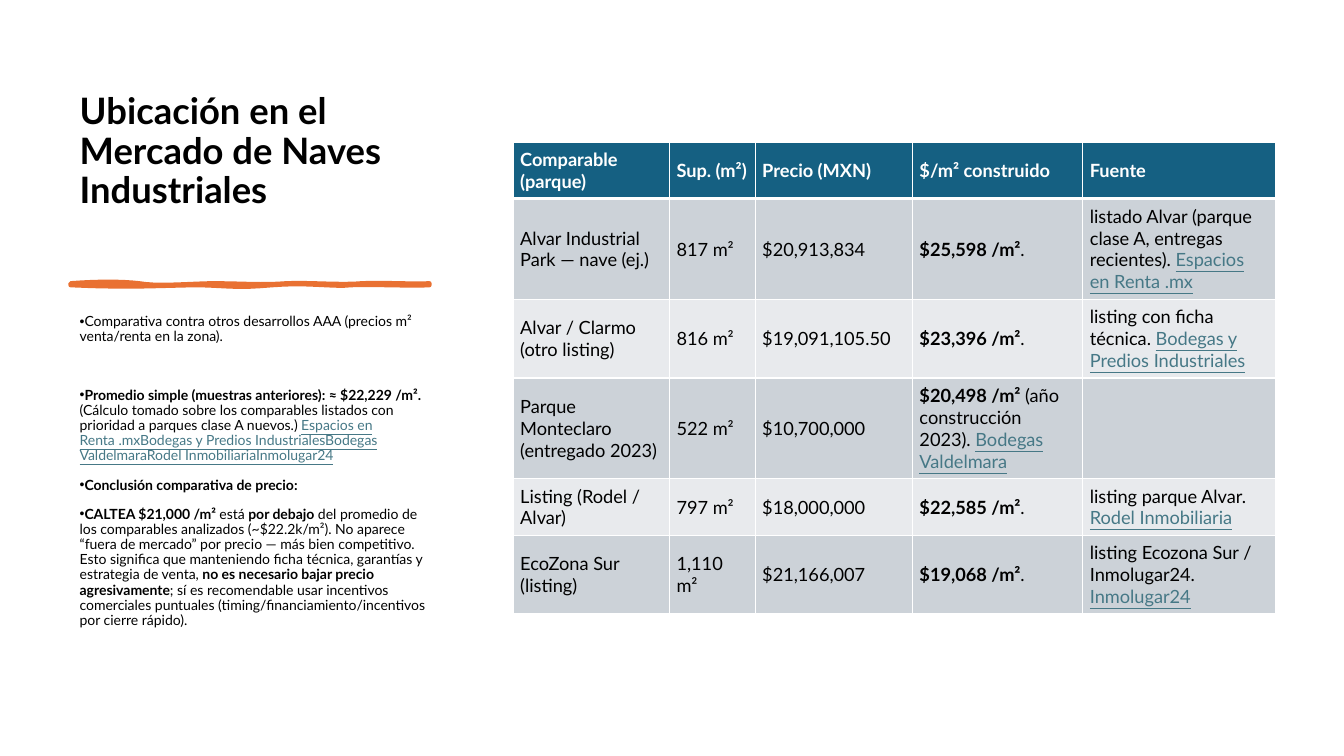
"""Build the slide that compares industrial building prices."""
from copy import deepcopy

from lxml.etree import SubElement
from pptx import Presentation
from pptx.dml.color import RGBColor
from pptx.enum.text import MSO_ANCHOR as Anchor, MSO_AUTO_SIZE as Fit, PP_ALIGN as Align
from pptx.oxml.ns import qn
from pptx.util import Inches, Pt

BLACK = RGBColor(0x00, 0x00, 0x00)
WHITE = RGBColor(0xFF, 0xFF, 0xFF)
TEAL = RGBColor(0x46, 0x78, 0x86)
BLUE = RGBColor(0x15, 0x60, 0x82)
GREY = RGBColor(0xCC, 0xD2, 0xD8)
PALE = RGBColor(0xE8, 0xEA, 0xED)
ORANGE = RGBColor(0xE9, 0x71, 0x32)


def write(par, runs, size, ink=BLACK):
    for text, mark in runs:
        run = par.add_run()
        run.text = text
        font = run.font
        font.name = "Lato"
        font.size = Pt(size)
        font.bold = mark == "bold"
        font.underline = mark == "link"
        font.color.rgb = TEAL if mark == "link" else ink
    return run


def edge(cell, side, width):
    line = SubElement(cell._tc.get_or_add_tcPr(), qn(f"a:ln{side}"), w=str(Pt(width)))
    fill = SubElement(line, qn("a:solidFill"))
    SubElement(fill, qn("a:srgbClr"), val=str(WHITE))


deck = Presentation()
deck.slide_width = Inches(13.33)
deck.slide_height = Inches(7.5)
slide = deck.slides.add_slide(deck.slide_layouts[1])

title = slide.shapes.title
title.left, title.top = Inches(0.69), Inches(0.7)
title.width, title.height = Inches(3.75), Inches(1.88)
frame = title.text_frame
frame.auto_size = Fit.NONE
frame.vertical_anchor = Anchor.BOTTOM
par = frame.paragraphs[0]
par.alignment = Align.LEFT
par.line_spacing = 0.9
run = write(par, [("Ubicación en el Mercado de Naves Industriales", "bold")], 26)
par.add_line_break()
par._p[-1].append(deepcopy(run._r.rPr))
tail = SubElement(par._p, qn("a:endParaRPr"), sz="2600", b="1")
SubElement(tail, qn("a:latin"), typeface="Lato")

curves = [
    [(0.97, 2.79), (1.21, 2.79), (1.38, 2.81)],
    [(1.55, 2.84), (1.77, 2.82), (2.09, 2.81)],
    [(2.41, 2.81), (2.6, 2.83), (2.84, 2.81)],
    [(3.08, 2.8), (3.39, 2.83), (3.59, 2.81)],
    [(3.79, 2.8), (4.12, 2.82), (4.26, 2.81)],
    [(4.26, 2.82), (4.26, 2.83), (4.26, 2.83)],
    [(4.08, 2.84), (3.64, 2.82), (3.48, 2.83)],
    [(3.32, 2.85), (3.04, 2.8), (2.7, 2.83)],
    [(2.35, 2.86), (2.31, 2.84), (1.99, 2.83)],
    [(1.66, 2.83), (1.32, 2.86), (0.7, 2.83)],
]
steps = 8
start = (0.7, 2.81)
dots = []
for one, two, end in curves:
    for t in (i / steps for i in range(1, steps + 1)):
        u = 1 - t
        dots.append(tuple(
            Inches(u**3 * a + 3 * u * u * t * b + 3 * u * t * t * c + t**3 * d)
            for a, b, c, d in zip(start, one, two, end)))
    start = end
pen = slide.shapes.build_freeform(Inches(0.7), Inches(2.81))
pen.add_line_segments(dots, close=True)
stroke = pen.convert_to_shape()
stroke.shadow.inherit = False
stroke.fill.solid()
stroke.fill.fore_color.rgb = ORANGE
stroke.line.color.rgb = ORANGE
stroke.line.width = Pt(3)
SubElement(stroke.line._get_or_add_ln(), qn("a:round"))

notes = [
    (0, [("Comparativa contra otros desarrollos AAA (precios m² venta/renta en la zona).", "")]),
    (31, [("Promedio simple (muestras anteriores): ≈ $22,229 /m².", "bold"),
          (" (Cálculo tomado sobre los comparables listados con prioridad a parques "
           "clase A nuevos.) ", ""),
          ("Espacios en Renta .mxBodegas y Predios IndustrialesBodegas "
           "ValdelmaraRodel InmobiliariaInmolugar24", "link")]),
    (10, [("Conclusión comparativa de precio:", "bold")]),
    (10, [("CALTEA $21,000 /m² ", "bold"), ("está ", ""), ("por debajo", "bold"),
          (" del promedio de los comparables analizados (~$22.2k/m²). No aparece "
           "“fuera de mercado” por precio — más bien competitivo. Esto significa que "
           "manteniendo ficha técnica, garantías y estrategia de venta, ", ""),
          ("no es necesario bajar precio agresivamente", "bold"),
          ("; sí es recomendable usar incentivos comerciales puntuales "
           "(timing/financiamiento/incentivos por cierre rápido).", "")]),
]
body = slide.placeholders[1]
body.left, body.top = Inches(0.69), Inches(3.07)
body.width, body.height = Inches(3.75), Inches(3.73)
frame = body.text_frame
frame.auto_size = Fit.NONE
for i, (gap, runs) in enumerate(notes):
    par = frame.add_paragraph() if i else frame.paragraphs[0]
    props = par._p.get_or_add_pPr()
    props.set("marL", "0")
    props.set("indent", str(-Inches(0.25)))
    SubElement(props, qn("a:buChar"), char="•")
    par.line_spacing = 0.9
    par.space_before = Pt(gap)
    write(par, runs, 10)

heads = ["Comparable (parque)", "Sup. (m²)", "Precio (MXN)", "$/m² construido", "Fuente"]
sales = [
    ("Alvar Industrial Park — nave (ej.)", "817 m²", "$20,913,834", "$25,598 /m²", ".", "",
     "listado Alvar (parque clase A, entregas recientes). ", "Espacios en Renta .mx"),
    ("Alvar / Clarmo (otro listing)", "816 m²", "$19,091,105.50", "$23,396 /m²", ".", "",
     "listing con ficha técnica. ", "Bodegas y Predios Industriales"),
    ("Parque Monteclaro (entregado 2023)", "522 m²", "$10,700,000", "$20,498 /m²",
     " (año construcción 2023). ", "Bodegas Valdelmara", "", ""),
    ("Listing (Rodel / Alvar)", "797 m²", "$18,000,000", "$22,585 /m²", ".", "",
     "listing parque Alvar. ", "Rodel Inmobiliaria"),
    ("EcoZona Sur (listing)", "1,110 m²", "$21,166,007", "$19,068 /m²", ".", "",
     "listing Ecozona Sur / Inmolugar24. ", "Inmolugar24"),
]
rows = [[[(head, "bold")] for head in heads]]
for park, area, price, rate, rest, site, lead, link in sales:
    rows.append([[(park, "")], [(area, "")], [(price, "")],
                 [(rate, "bold"), (rest, ""), (site, "link")],
                 [(lead, ""), (link, "link")]])

table = slide.shapes.add_table(
    len(rows), len(heads), Inches(5.09), Inches(1.41), Inches(7.55), Inches(4.68)).table
for col, width in zip(table.columns, [1.55, 0.85, 1.56, 1.69, 1.91]):
    col.width = Inches(width)
for row, height in zip(table.rows, [0.56, 1, 0.78, 1, 0.56, 0.78]):
    row.height = Inches(height)
for r, row in enumerate(rows):
    for c, runs in enumerate(row):
        cell = table.cell(r, c)
        cell.vertical_anchor = Anchor.MIDDLE
        cell.margin_left = cell.margin_right = Inches(0.07)
        cell.margin_top = cell.margin_bottom = Inches(0.04)
        for side, width in zip("LRTB", [1, 1, 3 if r == 1 else 1, 1 if r else 3]):
            edge(cell, side, width)
        cell.fill.solid()
        cell.fill.fore_color.rgb = (GREY if r % 2 else PALE) if r else BLUE
        runs = [pair for pair in runs if pair[0]]
        if runs:
            write(cell.text_frame.paragraphs[0], runs, 13, BLACK if r else WHITE)

deck.save("out.pptx")
